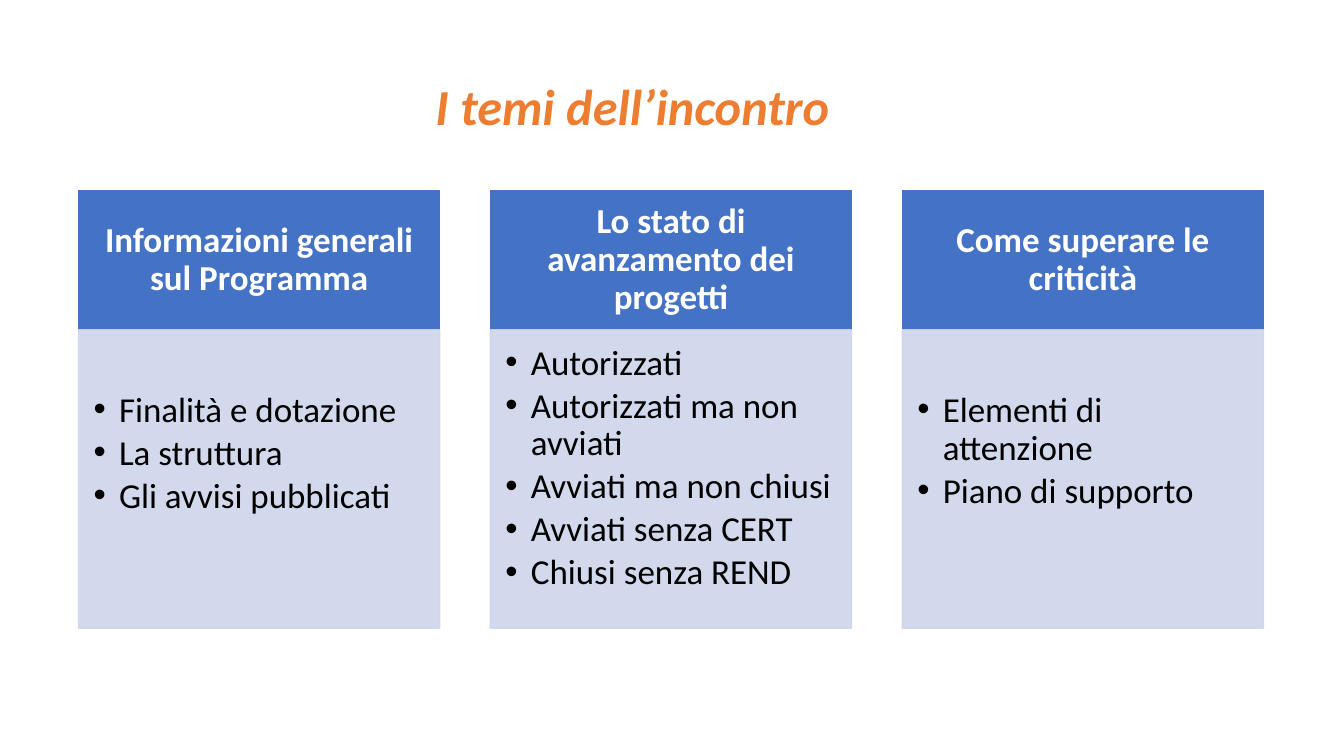
from dataclasses import dataclass

import lxml.etree
import pptx
import pptx.dml.color
import pptx.enum.shapes
import pptx.enum.text
import pptx.oxml.ns
import pptx.util

Cm = pptx.util.Cm
Pt = pptx.util.Pt
RGBColor = pptx.dml.color.RGBColor
Align = pptx.enum.text.PP_ALIGN
Anchor = pptx.enum.text.MSO_ANCHOR
qn = pptx.oxml.ns.qn

ORANGE = RGBColor(0xED, 0x7D, 0x31)
BLUE = RGBColor(0x44, 0x72, 0xC4)
PALE_BLUE = RGBColor(0xCF, 0xD5, 0xEA)
WHITE = RGBColor(0xFF, 0xFF, 0xFF)
BLACK = RGBColor(0x00, 0x00, 0x00)

FONT = "Calibri"
TEXT_SIZE = 25
FIRST_LEFT, COLUMN_PITCH, COLUMN_WIDTH = 1.98, 10.38, 9.1
HEADING_TOP, HEADING_HEIGHT, TOPICS_HEIGHT = 4.8, 3.51, 7.52
TOP_INSET, LOWERED_TOP_INSET = 0.38, 1.57


@dataclass(frozen=True)
class Theme:
    heading: str
    topics: tuple[str, ...]
    top_inset: float


THEMES = (
    Theme(
        "Informazioni generali sul Programma",
        ("Finalità e dotazione", "La struttura", "Gli avvisi pubblicati"),
        LOWERED_TOP_INSET,
    ),
    Theme(
        "Lo stato di avanzamento dei progetti",
        (
            "Autorizzati",
            "Autorizzati ma non avviati",
            "Avviati ma non chiusi",
            "Avviati senza CERT",
            "Chiusi senza REND",
        ),
        TOP_INSET,
    ),
    Theme(
        "Come superare le criticità",
        ("Elementi di attenzione", "Piano di supporto"),
        LOWERED_TOP_INSET,
    ),
)


def set_font(paragraph, size: float, color: RGBColor, bold: bool = False, italic: bool = False) -> None:
    font = paragraph.font
    font.name, font.size = FONT, Pt(size)
    font.bold, font.italic = bold, italic
    font.color.rgb = color


def set_insets(frame, left: float, top: float, right: float, bottom: float) -> None:
    frame.margin_left, frame.margin_top = Cm(left), Cm(top)
    frame.margin_right, frame.margin_bottom = Cm(right), Cm(bottom)


def add_panel(slide, left: float, top: float, height: float, color: RGBColor):
    panel = slide.shapes.add_shape(
        pptx.enum.shapes.MSO_SHAPE.RECTANGLE, Cm(left), Cm(top), Cm(COLUMN_WIDTH), Cm(height)
    )
    panel.shadow.inherit = False
    panel.fill.solid()
    panel.fill.fore_color.rgb = color
    panel.line.color.rgb = color
    panel.line.width = Pt(1)
    panel.text_frame.word_wrap = True
    return panel


def make_translucent(panel, percent: int) -> None:
    for color in panel.element.spPr.iter(qn("a:srgbClr")):
        lxml.etree.SubElement(color, qn("a:alpha"), val=str(percent * 1000))


def add_bullet(paragraph) -> None:
    properties = paragraph._p.get_or_add_pPr()
    properties.set("marL", str(Cm(0.64)))
    properties.set("indent", str(-Cm(0.64)))
    lxml.etree.SubElement(properties, qn("a:buFont"), typeface="Arial")
    lxml.etree.SubElement(properties, qn("a:buChar"), char="•")


def add_heading(slide, theme: Theme, left: float) -> None:
    frame = add_panel(slide, left, HEADING_TOP, HEADING_HEIGHT, BLUE).text_frame
    frame.vertical_anchor = Anchor.MIDDLE
    set_insets(frame, 0.48, 0.28, 0.48, 0.28)
    heading = frame.paragraphs[0]
    heading.text = theme.heading
    heading.alignment = Align.CENTER
    heading.line_spacing = 0.9
    set_font(heading, TEXT_SIZE, WHITE, bold=True)


def add_topics(slide, theme: Theme, left: float) -> None:
    panel = add_panel(slide, left, HEADING_TOP + HEADING_HEIGHT, TOPICS_HEIGHT, PALE_BLUE)
    make_translucent(panel, 90)
    frame = panel.text_frame
    frame.vertical_anchor = Anchor.TOP
    set_insets(frame, 0.38, theme.top_inset, 0.48, 0.56)
    frame.text = "\n".join(theme.topics)
    for topic in frame.paragraphs:
        topic.alignment = Align.LEFT
        topic.line_spacing = 0.9
        topic.space_after = Pt(0.15 * TEXT_SIZE)
        add_bullet(topic)
        set_font(topic, TEXT_SIZE, BLACK)


def add_title(slide) -> None:
    title = slide.shapes.title
    title.left, title.top, title.width, title.height = Cm(10.62), Cm(1.75), Cm(10.64), Cm(1.8)
    frame = title.text_frame
    frame.word_wrap = False
    frame.auto_size = pptx.enum.text.MSO_AUTO_SIZE.NONE
    frame.vertical_anchor = Anchor.MIDDLE
    frame.text = "I temi dell’incontro"
    frame.paragraphs[0].alignment = Align.CENTER
    set_font(frame.paragraphs[0], 36, ORANGE, bold=True, italic=True)


def main() -> None:
    presentation = pptx.Presentation()
    presentation.slide_width, presentation.slide_height = Cm(33.87), Cm(19.05)
    slide = presentation.slides.add_slide(presentation.slide_layouts[5])
    add_title(slide)
    for column, theme in enumerate(THEMES):
        left = FIRST_LEFT + column * COLUMN_PITCH
        add_heading(slide, theme, left)
        add_topics(slide, theme, left)
    presentation.save("out.pptx")


if __name__ == "__main__":
    main()
